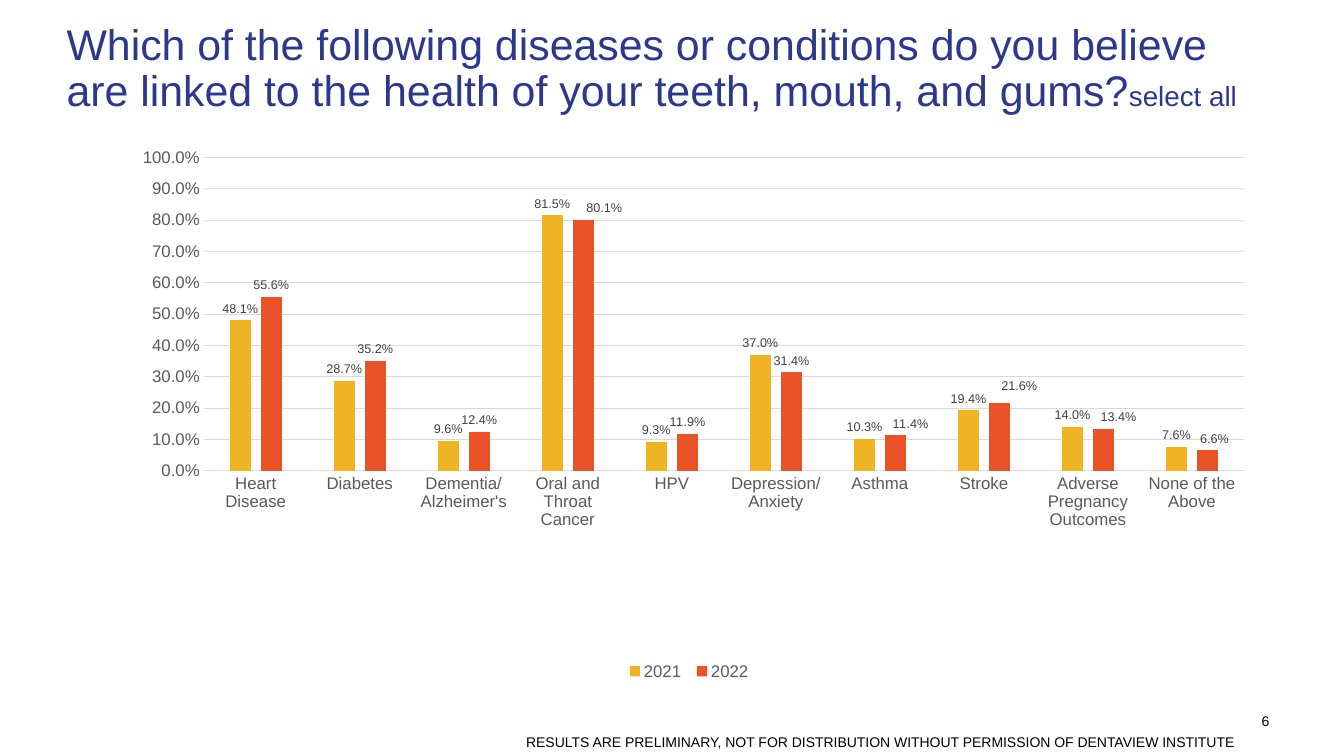
from lxml import etree
from pptx import Presentation
from pptx.chart.data import CategoryChartData
from pptx.dml.color import RGBColor
from pptx.enum.chart import XL_CHART_TYPE as ChartType, XL_LABEL_POSITION as LabelPos
from pptx.enum.chart import XL_LEGEND_POSITION as LegendPos, XL_TICK_MARK as TickMark
from pptx.enum.text import MSO_ANCHOR as Anchor, MSO_AUTO_SIZE as AutoSize, PP_ALIGN as Align
from pptx.oxml.ns import qn
from pptx.util import Inches, Pt

FONT = "Arial"
NAVY, BLACK, GREY, DARK, RULE = "2C378E", "000000", "595959", "404040", "D9D9D9"
PERCENT = "0.0%"

TITLE = [
    ("Which of the following diseases or conditions do you believe "
     "are linked to the health of your teeth, mouth, and gums?", 30.6),
    ("select all", 19.8),
]
FOOTER = "RESULTS ARE PRELIMINARY, NOT FOR DISTRIBUTION WITHOUT PERMISSION OF DENTAVIEW INSTITUTE"
PAGE = "6"

CONDITIONS = [  # condition, 2021, 2022
    ("Heart Disease", 0.481, 0.556),
    ("Diabetes", 0.287, 0.352),
    ("Dementia/Alzheimer's", 0.096, 0.124),
    ("Oral and Throat Cancer", 0.815, 0.801),
    ("HPV", 0.093, 0.119),
    ("Depression/ Anxiety", 0.37, 0.314),
    ("Asthma", 0.103, 0.114),
    ("Stroke", 0.194, 0.216),
    ("Adverse Pregnancy Outcomes", 0.14, 0.134),
    ("None of the Above", 0.076, 0.066),
]
YEARS = [("2021", "F0B323"), ("2022", "EA5328")]
# 2022 labels moved aside: point -> (dx, dy) as shares of the chart
LABEL_SHIFTS = {3: (0.018, 0), 6: (0.013, 0), 7: (0.017, -0.01), 8: (0.013, 0), 9: (0.006, 0)}


def rgb(value):
    return RGBColor.from_string(value)


def set_font(font, size, color):
    font.name, font.size = FONT, Pt(size)
    font.color.rgb = rgb(color)


def make_layout(**settings):
    """Return a c:layout element with a manual layout."""
    layout = etree.Element(qn("c:layout"))
    manual = etree.SubElement(layout, qn("c:manualLayout"))
    for name, value in settings.items():
        etree.SubElement(manual, qn(f"c:{name}"), val=str(value))
    return layout


def add_text(slide, box, text, align, inset):
    sp = slide.shapes.add_textbox(*map(Inches, box))
    tf = sp.text_frame
    tf.word_wrap = True
    tf.margin_left = tf.margin_right = Inches(inset)
    tf.margin_top = tf.margin_bottom = Inches(inset / 2)
    p = tf.paragraphs[0]
    p.alignment = align
    r = p.add_run()
    r.text = text
    set_font(r.font, 10, BLACK)


def add_title(slide):
    sp = slide.shapes.title
    sp.left, sp.top, sp.width, sp.height = map(Inches, (0.66, 0.23, 11.93, 1.06))
    tf = sp.text_frame
    tf.word_wrap, tf.auto_size, tf.vertical_anchor = True, AutoSize.NONE, Anchor.TOP
    tf.margin_left = tf.margin_right = tf.margin_top = tf.margin_bottom = 0
    p = tf.paragraphs[0]
    p.alignment, p.line_spacing = Align.LEFT, 0.9
    for text, size in TITLE:
        r = p.add_run()
        r.text = text
        set_font(r.font, size, NAVY)


def style_axes(chart):
    for axis in (chart.category_axis, chart.value_axis):
        axis.major_tick_mark = axis.minor_tick_mark = TickMark.NONE
        set_font(axis.tick_labels.font, 12, GREY)
    values = chart.value_axis
    values.minimum_scale, values.maximum_scale, values.major_unit = 0, 1, 0.1
    values.tick_labels.number_format = PERCENT
    values.tick_labels.number_format_is_linked = False
    values.format.line.fill.background()
    for line in (chart.category_axis.format.line, values.major_gridlines.format.line):
        line.color.rgb, line.width = rgb(RULE), Pt(0.75)


def shift_label(series, index, dx, dy):
    label = series.points[index].data_label
    set_font(label.font, 9, DARK)
    label.position = LabelPos.OUTSIDE_END
    idx = series._element.xpath(f'.//c:dLbl/c:idx[@val="{index}"]')[0]
    idx.addnext(etree.Element(qn("c:numFmt"), formatCode=PERCENT, sourceLinked="0"))
    idx.addnext(make_layout(x=dx, y=dy))


def add_chart(slide):
    data = CategoryChartData(number_format=PERCENT)
    names, *columns = zip(*CONDITIONS)
    data.categories = names
    for (year, _), column in zip(YEARS, columns):
        data.add_series(year, column)
    box = map(Inches, (1.09, 1.38, 11.49, 5.9))
    chart = slide.shapes.add_chart(ChartType.COLUMN_CLUSTERED, *box, data).chart
    chart.has_title = False
    set_font(chart.font, 10, BLACK)
    style_axes(chart)

    plot = chart.plots[0]
    plot.gap_width, plot.overlap, plot.vary_by_categories = 248, -48, False
    for series, (_, color) in zip(plot.series, YEARS):
        series.format.fill.solid()
        series.format.fill.fore_color.rgb = rgb(color)
        labels = series.data_labels
        labels.show_value, labels.position = True, LabelPos.OUTSIDE_END
        labels.number_format, labels.number_format_is_linked = PERCENT, False
        set_font(labels.font, 9, DARK)
    for index, (dx, dy) in LABEL_SHIFTS.items():
        shift_label(plot.series[1], index, dx, dy)

    chart.has_legend = True
    legend = chart.legend
    legend.position, legend.include_in_layout = LegendPos.BOTTOM, False
    set_font(legend.font, 12, GREY)

    area = chart._chartSpace.xpath("c:chart/c:plotArea")[0]
    for parent in (area, legend._element):
        for old in parent.findall(qn("c:layout")):
            parent.remove(old)
    area.insert(0, make_layout(layoutTarget="inner", xMode="edge", yMode="edge",
                               x=0.081, y=0.031, w=0.898, h=0.527))
    legend._element.find(qn("c:legendPos")).addnext(
        make_layout(xMode="edge", yMode="edge", x=0.44, y=0.87, w=0.12, h=0.05))


def main():
    prs = Presentation()
    prs.slide_width, prs.slide_height = Inches(13.33), Inches(7.5)
    slide = prs.slides.add_slide(prs.slide_layouts[5])
    add_title(slide)
    add_chart(slide)
    add_text(slide, (12.01, 7.07, 0.58, 0.17), PAGE, Align.RIGHT, 0)
    add_text(slide, (5.12, 7.23, 7.47, 0.27), FOOTER, Align.LEFT, 0.1)
    prs.save("out.pptx")


if __name__ == "__main__":
    main()
